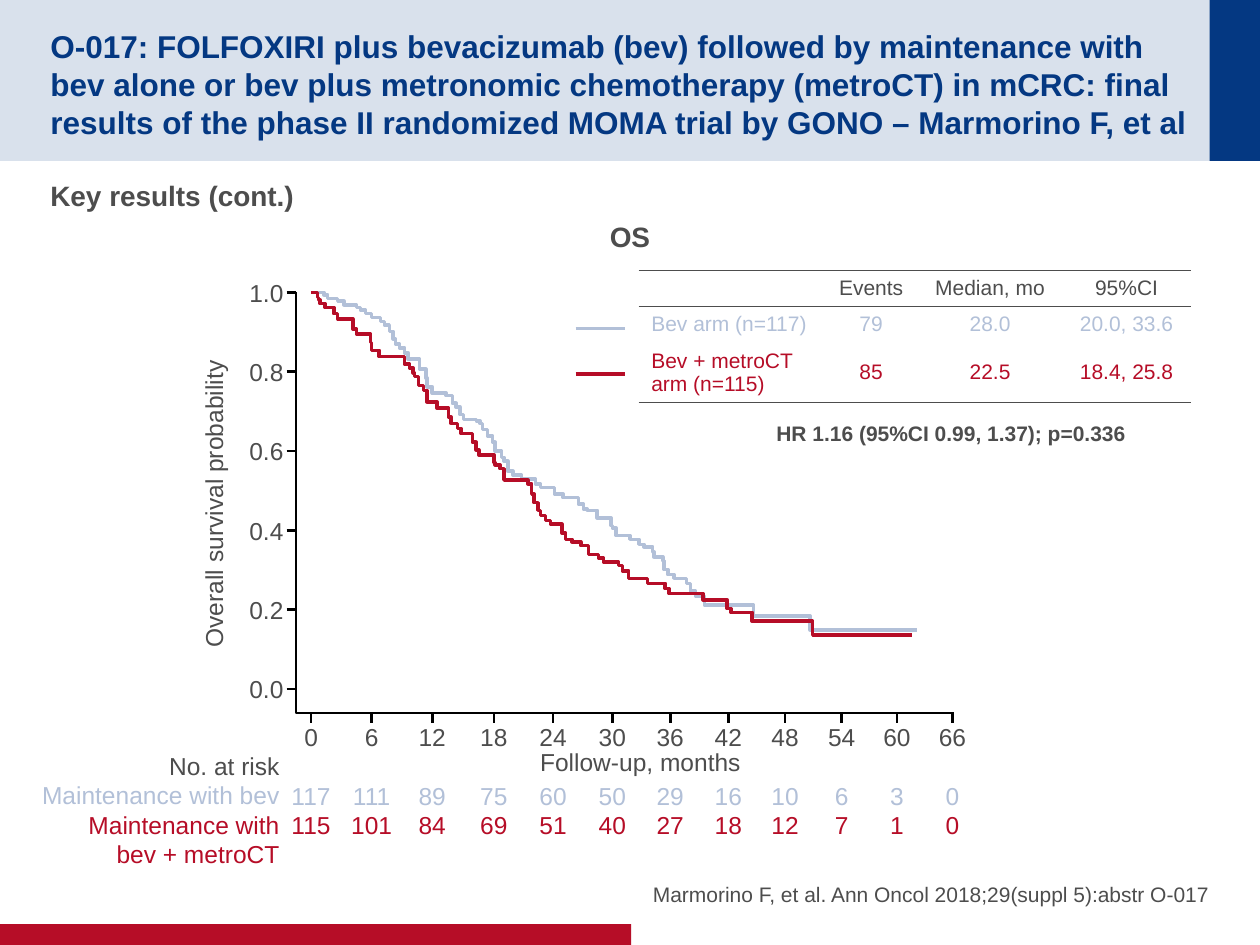
from dataclasses import dataclass
from typing import Optional

from lxml import etree
from pptx import Presentation
from pptx.dml.color import RGBColor
from pptx.enum import shapes, text
from pptx.oxml import ns
from pptx.util import Pt


@dataclass(frozen=True)
class Theme:
    font: str = "Arial"
    navy: str = "043882"
    red: str = "B60D27"
    pale: str = "B2C0D8"
    grey: str = "4D4D4D"
    black: str = "000000"
    white: str = "FFFFFF"
    title: float = 18
    heading: float = 16
    axis: float = 14
    small: float = 12


@dataclass(frozen=True)
class Line:
    text: str
    color: str
    before: float = 0


@dataclass(frozen=True)
class Arm:
    """A treatment arm; each step is (x where the curve drops, y it drops to)."""
    name: str
    color: str
    cells: tuple[str, ...]
    at_risk: tuple[int, ...]
    key_y: float
    end_x: int
    steps: tuple[tuple[int, int], ...]


THEME = Theme()
LEFT, CENTER, RIGHT = text.PP_ALIGN.LEFT, text.PP_ALIGN.CENTER, text.PP_ALIGN.RIGHT
TOP, MIDDLE, BOTTOM = (text.MSO_ANCHOR.TOP, text.MSO_ANCHOR.MIDDLE,
                       text.MSO_ANCHOR.BOTTOM)

# Curve and axis outlines are on a grid of 0.72 pt.
GRID = Pt(0.72)
START = (247, 232)
AXES = ((235, 232), (235, 566), (757, 566))

AXIS_X, AXIS_Y, TICK = 169.2, 407.5, 5.4
Y_TOP, Y_STEP = 167, 45.36
MONTH_X = (177.8, 212.4, 247, 282.2, 316.1, 349.9, 383, 416.2, 448.6, 481, 512.6, 544.3)
HEADER = ("", "Events", "Median, mo", "95%CI")
COLUMN_WIDTHS = (105.8, 54, 82, 74)
ROW_HEIGHTS = (20.6, 20.6, 34.2)

BEV = Arm(
    "Bev arm (n=117)", THEME.pale, ("79", "28.0", "20.0, 33.6"),
    (117, 111, 89, 75, 60, 50, 29, 16, 10, 6, 3, 0), 187.7, 728,
    ((257, 234), (260, 237), (268, 239), (273, 242), (283, 244), (286, 246), (290, 249),
     (295, 252), (302, 255), (305, 258), (309, 263), (312, 269), (314, 273), (317, 276),
     (321, 280), (324, 285), (333, 293), (338, 300), (339, 307), (343, 312), (354, 314),
     (359, 320), (362, 323), (365, 329), (368, 333), (378, 334), (381, 336), (383, 341),
     (387, 346), (391, 351), (393, 358), (398, 363), (400, 366), (403, 374), (407, 377),
     (414, 380), (425, 384), (429, 387), (440, 392), (447, 395), (459, 400), (463, 404),
     (466, 405), (474, 411), (485, 417), (486, 419), (489, 425), (500, 428), (507, 432),
     (511, 434), (518, 438), (519, 442), (526, 445), (527, 452), (530, 456), (535, 459),
     (545, 463), (548, 469), (552, 473), (559, 480), (598, 489), (643, 500)))
METRO = Arm(
    "Bev + metroCT arm (n=115)", THEME.red, ("85", "22.5", "18.4, 25.8"),
    (115, 101, 84, 69, 51, 40, 27, 18, 12, 7, 1, 0), 213.8, 724,
    ((252, 236), (253, 238), (254, 241), (258, 244), (265, 249), (268, 253), (280, 261),
     (283, 265), (294, 272), (295, 278), (301, 283), (321, 289), (325, 292), (328, 296),
     (329, 299), (332, 306), (336, 310), (339, 319), (347, 324), (356, 331), (358, 336),
     (363, 340), (366, 344), (375, 351), (378, 357), (380, 361), (392, 367), (393, 369),
     (397, 372), (400, 381), (419, 384), (422, 392), (424, 399), (427, 405), (429, 409),
     (433, 413), (437, 416), (446, 423), (449, 428), (454, 430), (461, 433), (467, 440),
     (475, 443), (479, 446), (491, 449), (494, 453), (499, 459), (514, 463), (528, 467),
     (531, 471), (558, 476), (577, 483), (580, 486), (597, 493), (645, 504)))


def rgb(color: str) -> RGBColor:
    return RGBColor.from_string(color)


def write(para, content: str, *, size: float, color: str = THEME.grey, bold: bool = False,
          align=LEFT, before: float = 0, after: float = 0) -> None:
    para.alignment = align
    para.space_before, para.space_after = Pt(before), Pt(after)
    if not content:
        para._p.get_or_add_endParaRPr().set("sz", str(int(size * 100)))
        return
    span = para.add_run()
    span.text = content
    span.font.name, span.font.size, span.font.bold = THEME.font, Pt(size), bold
    span.font.color.rgb = rgb(color)


def add_box(page, left: float, top: float, width: float, height: float, *,
            anchor=TOP, wrap: bool = True):
    box = page.shapes.add_textbox(Pt(left), Pt(top), Pt(width), Pt(height))
    frame = box.text_frame
    frame.word_wrap, frame.vertical_anchor = wrap, anchor
    frame.margin_left = frame.margin_right = frame.margin_top = frame.margin_bottom = 0
    return box


def add_label(page, content: str, left: float, top: float, width: float, height: float,
              *, anchor=TOP, **style):
    box = add_box(page, left, top, width, height, anchor=anchor)
    write(box.text_frame.paragraphs[0], content, **style)
    return box


def add_stack(page, lines: list[Line], left: float, top: float, width: float, align) -> None:
    """Put several axis-sized lines, each with its own colour, in one box."""
    frame = add_box(page, left, top, width, 68).text_frame
    for number, line in enumerate(lines):
        para = frame.add_paragraph() if number else frame.paragraphs[0]
        write(para, line.text, size=THEME.axis, color=line.color, align=align,
              before=line.before)


def add_band(page, left: float, top: float, width: float, height: float, color: str,
             opacity: Optional[int] = None) -> None:
    band = page.shapes.add_shape(shapes.MSO_SHAPE.RECTANGLE,
                                 Pt(left), Pt(top), Pt(width), Pt(height))
    band.shadow.inherit = False
    band.fill.solid()
    band.fill.fore_color.rgb = rgb(color)
    band.line.fill.background()
    if opacity is not None:
        tint = band._element.spPr.find(".//" + ns.qn("a:srgbClr"))
        etree.SubElement(tint, ns.qn("a:alpha"), val=str(opacity * 1000))


def add_rule(page, x1: float, y1: float, x2: float, y2: float, color: str,
             weight: float) -> None:
    rule = page.shapes.add_connector(shapes.MSO_CONNECTOR.STRAIGHT,
                                     Pt(x1), Pt(y1), Pt(x2), Pt(y2))
    rule.line.color.rgb, rule.line.width = rgb(color), Pt(weight)
    etree.SubElement(rule._element.spPr, ns.qn("a:effectLst"))


def add_outline(page, points, color: str, weight: float) -> None:
    builder = page.shapes.build_freeform(*points[0], scale=GRID)
    builder.add_line_segments(points[1:], close=False)
    outline = builder.convert_to_shape()
    outline.shadow.inherit = False
    outline.fill.background()
    outline.line.color.rgb, outline.line.width = rgb(color), Pt(weight)


def add_curve(page, arm: Arm) -> None:
    points = [START]
    for x, y in arm.steps:
        points += [(x, points[-1][1]), (x, y)]
    points.append((arm.end_x, points[-1][1]))
    add_outline(page, points, arm.color, 2)
    add_rule(page, 329, arm.key_y, 357, arm.key_y, arm.color, 2)


def set_borders(cell, top: str, bottom: str) -> None:
    props = cell._tc.get_or_add_tcPr()
    for side, color in (("L", None), ("R", None), ("T", top), ("B", bottom)):
        edge = etree.SubElement(props, ns.qn("a:ln" + side), w=str(Pt(1)))
        if color is None:
            etree.SubElement(edge, ns.qn("a:noFill"))
        else:
            fill = etree.SubElement(edge, ns.qn("a:solidFill"))
            etree.SubElement(fill, ns.qn("a:srgbClr"), val=color)


def add_results(page, arms: tuple[Arm, ...]) -> None:
    rows = [(HEADER, THEME.grey)] + [((arm.name, *arm.cells), arm.color) for arm in arms]
    edges = (THEME.grey, THEME.grey, THEME.white, THEME.grey)
    table = page.shapes.add_table(len(rows), len(HEADER), Pt(365), Pt(154.6),
                                  Pt(sum(COLUMN_WIDTHS)), Pt(sum(ROW_HEIGHTS))).table
    table.first_row = table.horz_banding = False
    for column, width in zip(table.columns, COLUMN_WIDTHS):
        column.width = Pt(width)
    for r, (contents, color) in enumerate(rows):
        table.rows[r].height = Pt(ROW_HEIGHTS[r])
        for c, content in enumerate(contents):
            cell = table.cell(r, c)
            cell.margin_top = cell.margin_bottom = Pt(2)
            cell.vertical_anchor = MIDDLE
            set_borders(cell, edges[r], edges[r + 1])
            cell.fill.background()
            write(cell.text_frame.paragraphs[0], content, size=THEME.small, color=color,
                  align=CENTER if c else LEFT)


def add_axes(page) -> None:
    add_outline(page, AXES, THEME.black, 1.5)
    for number in range(6):
        y = Y_TOP + number * Y_STEP
        add_rule(page, AXIS_X - TICK, y, AXIS_X, y, THEME.black, 1.5)
        add_label(page, f"{1 - number / 5:.1f}", 136, y - 8.5, 26, 17, anchor=MIDDLE,
                  size=THEME.axis, align=RIGHT)
    for number, x in enumerate(MONTH_X):
        add_rule(page, x, AXIS_Y, x, AXIS_Y + TICK, THEME.black, 1.5)
        add_stack(page, [Line(str(number * 6), THEME.grey),
                         Line(str(BEV.at_risk[number]), BEV.color, before=16.8),
                         Line(str(METRO.at_risk[number]), METRO.color)],
                  x - 18, 412.6, 36, CENTER)
    add_label(page, "Follow-up, months", 301, 427, 130, 17, size=THEME.axis, align=CENTER)
    side = add_label(page, "Overall survival probability", 32, 279.5, 180, 17,
                     size=THEME.axis, align=CENTER)
    side.rotation = 270


def main() -> None:
    deck = Presentation()
    deck.slide_width, deck.slide_height = Pt(720), Pt(540)
    page = deck.slides.add_slide(deck.slide_layouts[6])
    add_band(page, 0, 0, 720, 92, THEME.navy, opacity=15)
    add_band(page, 691.2, 0, 28.8, 92, THEME.navy)
    add_band(page, 0, 528, 360.7, 12, THEME.red)
    add_label(page, "O-017: FOLFOXIRI plus bevacizumab (bev) followed by maintenance with "
              "bev alone or bev plus metronomic chemotherapy (metroCT) in mCRC: final "
              "results of the phase II randomized MOMA trial by GONO – Marmorino F, et al",
              28.8, 15, 653.8, 66, anchor=MIDDLE, size=THEME.title, color=THEME.navy,
              bold=True)
    body = add_box(page, 28.8, 102.2, 662.4, 46).text_frame
    heading = dict(size=THEME.heading, bold=True, after=4)
    write(body.paragraphs[0], "Key results (cont.)", **heading)
    write(body.add_paragraph(), "OS", align=CENTER, **heading)
    add_label(page, "Marmorino F, et al. Ann Oncol 2018;29(suppl 5):abstr O-017",
              365.8, 480.2, 325.4, 38.2, anchor=BOTTOM, size=THEME.small, align=RIGHT)
    add_results(page, (BEV, METRO))
    add_label(page, "HR 1.16 (95%CI 0.99, 1.37); p=0.336", 436, 240, 215, 15,
              size=THEME.small, bold=True, align=CENTER)
    add_axes(page)
    add_stack(page, [Line("No. at risk", THEME.grey), Line("Maintenance with bev", BEV.color),
                     Line("Maintenance with", METRO.color),
                     Line("bev + metroCT", METRO.color)], 16, 429.1, 143.8, RIGHT)
    for arm in (BEV, METRO):
        add_curve(page, arm)
    deck.save("out.pptx")


if __name__ == "__main__":
    main()
